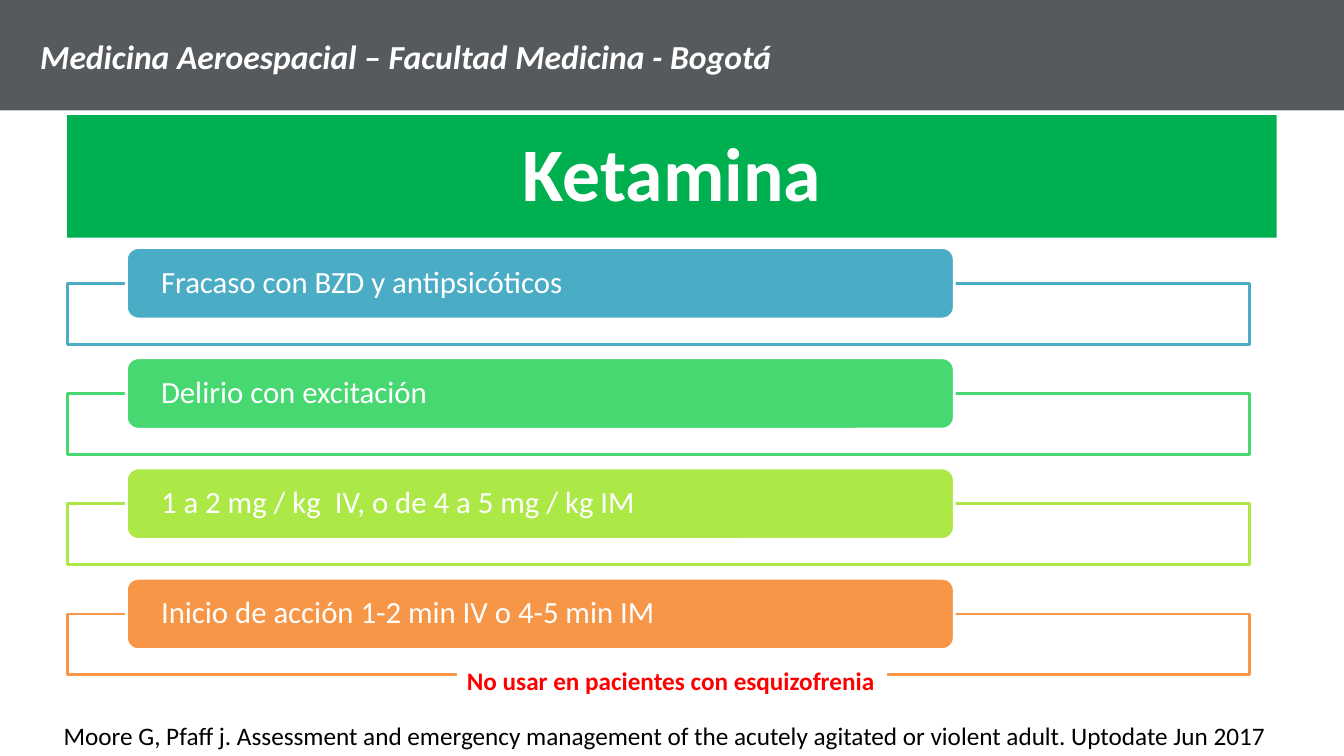
from lxml import etree
from pptx import Presentation, util as u
from pptx.dml.color import RGBColor
from pptx.enum import shapes, text
from pptx.oxml import ns

COLORS = {
    "white": "FFFFFF", "black": "000000", "gray": "565A5C", "title": "00B050",
    "red": "FF0000", "blue": "4BACC6", "green": "47D872", "lime": "ACE946",
    "orange": "F79646",
}
ITEMS = [
    ("Fracaso con BZD y antipsicóticos", "blue"),
    ("Delirio con excitación", "green"),
    ("1 a 2 mg / kg  IV, o de 4 a 5 mg / kg IM", "lime"),
    ("Inicio de acción 1-2 min IV o 4-5 min IM", "orange"),
]


def rgb(name):
    return RGBColor.from_string(COLORS[name])


def write(sp, words, size=18, color="black", bold=False, italic=False,
          align="LEFT", anchor="TOP", spacing=None, wrap=False, inset=None):
    tf = sp.text_frame
    tf.word_wrap = wrap
    tf.vertical_anchor = getattr(text.MSO_ANCHOR, anchor)
    if inset is not None:
        tf.margin_left = tf.margin_right = u.Inches(inset)
        tf.margin_top = tf.margin_bottom = 0
    p = tf.paragraphs[0]
    p.alignment = getattr(text.PP_ALIGN, align)
    p.line_spacing = spacing
    r = p.add_run()
    r.text = words
    r.font.name, r.font.size = "Calibri", u.Pt(size)
    r.font.bold, r.font.italic = bold, italic
    r.font.color.rgb = rgb(color)


class Deck:
    """Holds the current slide; places are percent of the slide's size."""

    def __init__(self, width, height):
        self.prs = Presentation()
        self.prs.slide_width = u.Inches(width)
        self.prs.slide_height = u.Inches(height)
        self.s = self.prs.slides.add_slide(self.prs.slide_layouts[6])

    def place(self, x, y, w, h):
        width, height = self.prs.slide_width, self.prs.slide_height
        return [int(share * side / 100) for share, side in
                ((x, width), (y, height), (w, width), (h, height))]

    def shape(self, at, fill, line=None, kind="RECTANGLE", alpha=None):
        preset = getattr(shapes.MSO_SHAPE, kind)
        sp = self.s.shapes.add_shape(preset, *self.place(*at))
        sp.shadow.inherit = False
        sp.fill.solid()
        sp.fill.fore_color.rgb = rgb(fill)
        if alpha:
            color = sp.fill._xPr.find(".//" + ns.qn("a:srgbClr"))
            etree.SubElement(color, ns.qn("a:alpha"), val=str(alpha * 1000))
        if line:
            sp.line.color.rgb = rgb(line)
            sp.line.width = u.Pt(2)
        else:
            sp.line.fill.background()
        return sp

    def label(self, at, words, **fmt):
        write(self.s.shapes.add_textbox(*self.place(*at)), words, **fmt)

    def item(self, y, words, color):
        self.shape((5, y + 4.72, 88, 8.06), "white", color, alpha=90)
        sp = self.shape((9.4, y, 61.6, 9.45), color, "white", "ROUNDED_RECTANGLE")
        write(sp, words, size=22, color="white", anchor="MIDDLE",
              spacing=0.9, wrap=True, inset=0.31)


def main():
    deck = Deck(13.33, 7.5)

    # Header band and title
    deck.shape((0, 0, 100, 14.6), "gray")
    title = deck.shape((5, 15.25, 90, 16.2), "title")
    write(title, "Ketamina", size=54, color="white", bold=True,
          align="CENTER", anchor="MIDDLE", spacing=0.9, wrap=True)

    # List of tabs over outlined frames
    for i, (words, color) in enumerate(ITEMS):
        deck.item(32.75 + 14.58 * i, words, color)

    # Warning, citation and header text
    warning = deck.shape((34, 87.3, 32, 5.4), "white")
    write(warning, "No usar en pacientes con esquizofrenia", color="red", bold=True)
    deck.label((4, 94.6, 92, 5.4),
               "Moore G, Pfaff j. Assessment and emergency management of the "
               "acutely agitated or violent adult. Uptodate Jun 2017")
    deck.label((2.25, 4.15, 56.3, 6.7),
               "Medicina Aeroespacial – Facultad Medicina - Bogotá",
               size=24, color="white", bold=True, italic=True)

    deck.prs.save("out.pptx")


if __name__ == "__main__":
    main()
